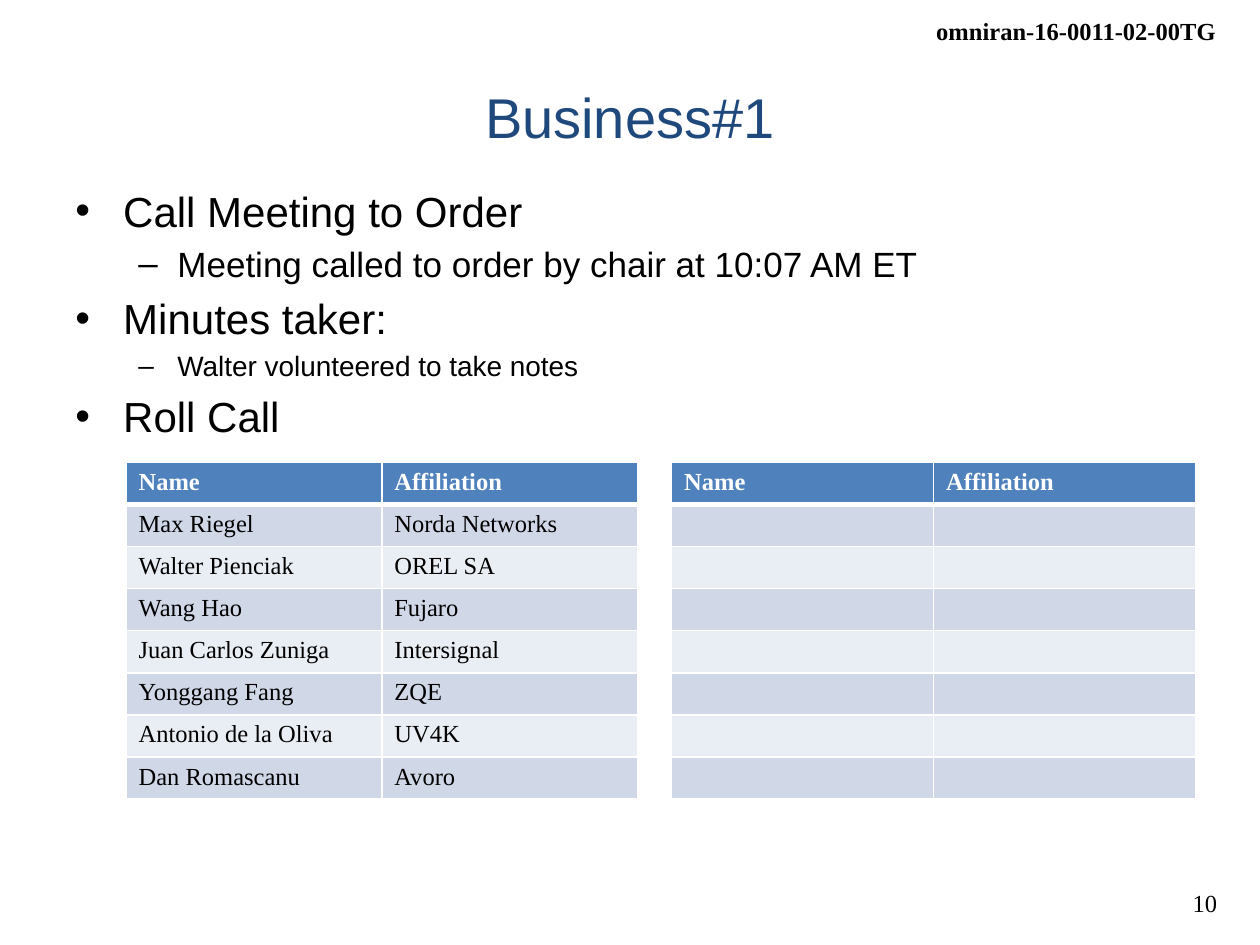
from dataclasses import dataclass

from lxml import etree
from pptx import Presentation
from pptx.dml.color import RGBColor
from pptx.enum.text import MSO_ANCHOR, MSO_AUTO_SIZE, PP_ALIGN
from pptx.oxml.ns import qn
from pptx.util import Inches, Pt

LEFT, CENTER, RIGHT = PP_ALIGN.LEFT, PP_ALIGN.CENTER, PP_ALIGN.RIGHT
MIDDLE = MSO_ANCHOR.MIDDLE
FIT_SHAPE = MSO_AUTO_SIZE.SHAPE_TO_FIT_TEXT
BLANK_LAYOUT = 6


@dataclass(frozen=True)
class Theme:
    sans: str = "Arial"
    serif: str = "Times New Roman"
    black: str = "000000"
    white: str = "FFFFFF"
    title: str = "1F497D"
    header: str = "4F81BD"
    bands: tuple = ("D0D8E8", "E9EDF4")
    title_size: int = 32
    topic_size: int = 24
    detail_size: int = 20
    note_size: int = 16
    small_size: int = 14
    rule: int = 1
    header_rule: int = 3


THEME = Theme()

# (level, text, size)
AGENDA = [
    (0, "Call Meeting to Order", THEME.topic_size),
    (1, "Meeting called to order by chair at 10:07 AM ET", THEME.detail_size),
    (0, "Minutes taker:", THEME.topic_size),
    (1, "Walter volunteered to take notes", THEME.note_size),
    (0, "Roll Call", THEME.topic_size),
]
# bullet, left margin, hanging indent for each level
LEVELS = [("•", 0.38, 0.38), ("–", 0.81, 0.31)]

HEADINGS = ["Name", "Affiliation", "", "Name", "Affiliation"]
ATTENDEES = [
    ("Max Riegel", "Norda Networks"),
    ("Walter Pienciak", "OREL SA"),
    ("Wang Hao", "Fujaro"),
    ("Juan Carlos Zuniga", "Intersignal"),
    ("Yonggang Fang", "ZQE"),
    ("Antonio de la Oliva", "UV4K"),
    ("Dan Romascanu", "Avoro"),
]
COLUMN_WIDTHS = [2.03, 2.03, 0.27, 2.08, 2.08]
GAP_COLUMN = 2


def write(paragraph, text, size, font, color, bold=False):
    run = paragraph.add_run()
    run.text = text
    run.font.size = Pt(size)
    run.font.name = font
    run.font.bold = bold
    run.font.color.rgb = RGBColor.from_string(color)


def add_text_frame(slide, box):
    frame = slide.shapes.add_textbox(*map(Inches, box)).text_frame
    frame.word_wrap = True
    return frame


def add_corner_label(slide, box, text, bold=False):
    frame = add_text_frame(slide, box)
    frame.word_wrap = False
    frame.auto_size = FIT_SHAPE
    label = frame.paragraphs[0]
    label.alignment = RIGHT
    write(label, text, THEME.small_size, THEME.serif, THEME.black, bold)


def add_title(slide, box, text):
    frame = add_text_frame(slide, box)
    frame.vertical_anchor = MIDDLE
    title = frame.paragraphs[0]
    title.alignment = CENTER
    write(title, text, THEME.title_size, THEME.sans, THEME.title)


def set_bullet(paragraph, level):
    bullet, margin, hanging = LEVELS[level]
    paragraph.level = level
    properties = paragraph._p.get_or_add_pPr()
    properties.set("marL", str(Inches(margin)))
    properties.set("indent", str(-Inches(hanging)))
    etree.SubElement(properties, qn("a:buFont")).set("typeface", THEME.sans)
    etree.SubElement(properties, qn("a:buChar")).set("char", bullet)


def add_agenda(slide, box, items):
    frame = add_text_frame(slide, box)
    for index, (level, text, size) in enumerate(items):
        item = frame.add_paragraph() if index else frame.paragraphs[0]
        item.alignment = LEFT
        item.space_before = Pt(0.2 * size)
        set_bullet(item, level)
        write(item, text, size, THEME.sans, THEME.black)


def set_borders(cell, top, bottom):
    properties = cell._tc.get_or_add_tcPr()
    widths = {"a:lnL": THEME.rule, "a:lnR": THEME.rule, "a:lnT": top, "a:lnB": bottom}
    for side, width in widths.items():
        line = etree.SubElement(properties, qn(side), w=str(Pt(width)))
        fill = etree.SubElement(line, qn("a:solidFill"))
        etree.SubElement(fill, qn("a:srgbClr"), val=THEME.white)


def set_empty_type(paragraph):
    """Keep an empty cell from stretching its row with the default type."""
    end = etree.SubElement(
        paragraph._p, qn("a:endParaRPr"), sz=str(THEME.small_size * 100)
    )
    etree.SubElement(end, qn("a:latin"), typeface=THEME.serif)


def fill_cell(cell, text, row, column):
    is_header = row == 0
    set_borders(
        cell,
        top=THEME.header_rule if row == 1 else THEME.rule,
        bottom=THEME.header_rule if is_header else THEME.rule,
    )
    if column == GAP_COLUMN:
        background = THEME.white
    else:
        background = THEME.header if is_header else THEME.bands[(row - 1) % 2]
    cell.fill.solid()
    cell.fill.fore_color.rgb = RGBColor.from_string(background)

    entry = cell.text_frame.paragraphs[0]
    if text:
        color = THEME.white if is_header else THEME.black
        write(entry, text, THEME.small_size, THEME.serif, color, is_header)
    else:
        set_empty_type(entry)


def add_roll_call(slide, box, attendees):
    rows = [HEADINGS] + [(*attendee, "", "", "") for attendee in attendees]
    left, top, width, height = map(Inches, box)
    table = slide.shapes.add_table(
        len(rows), len(HEADINGS), left, top, width, height
    ).table
    for column, column_width in zip(table.columns, COLUMN_WIDTHS):
        column.width = Inches(column_width)
    for row, texts in enumerate(rows):
        for column, text in enumerate(texts):
            fill_cell(table.cell(row, column), text, row, column)


def main():
    deck = Presentation()
    deck.slide_width, deck.slide_height = Inches(10), Inches(7.5)
    slide = deck.slides.add_slide(deck.slide_layouts[BLANK_LAYOUT])
    add_corner_label(slide, (7.31, 0.08, 2.44, 0.34), "omniran-16-0011-02-00TG", bold=True)
    add_corner_label(slide, (9.33, 7, 0.43, 0.34), "10")
    add_title(slide, (0.5, 0.3, 9, 1.25), "Business#1")
    add_agenda(slide, (0.5, 1.42, 9, 2.83), AGENDA)
    add_roll_call(slide, (1, 3.67, 8.49, 2.55), ATTENDEES)
    deck.save("out.pptx")


if __name__ == "__main__":
    main()
